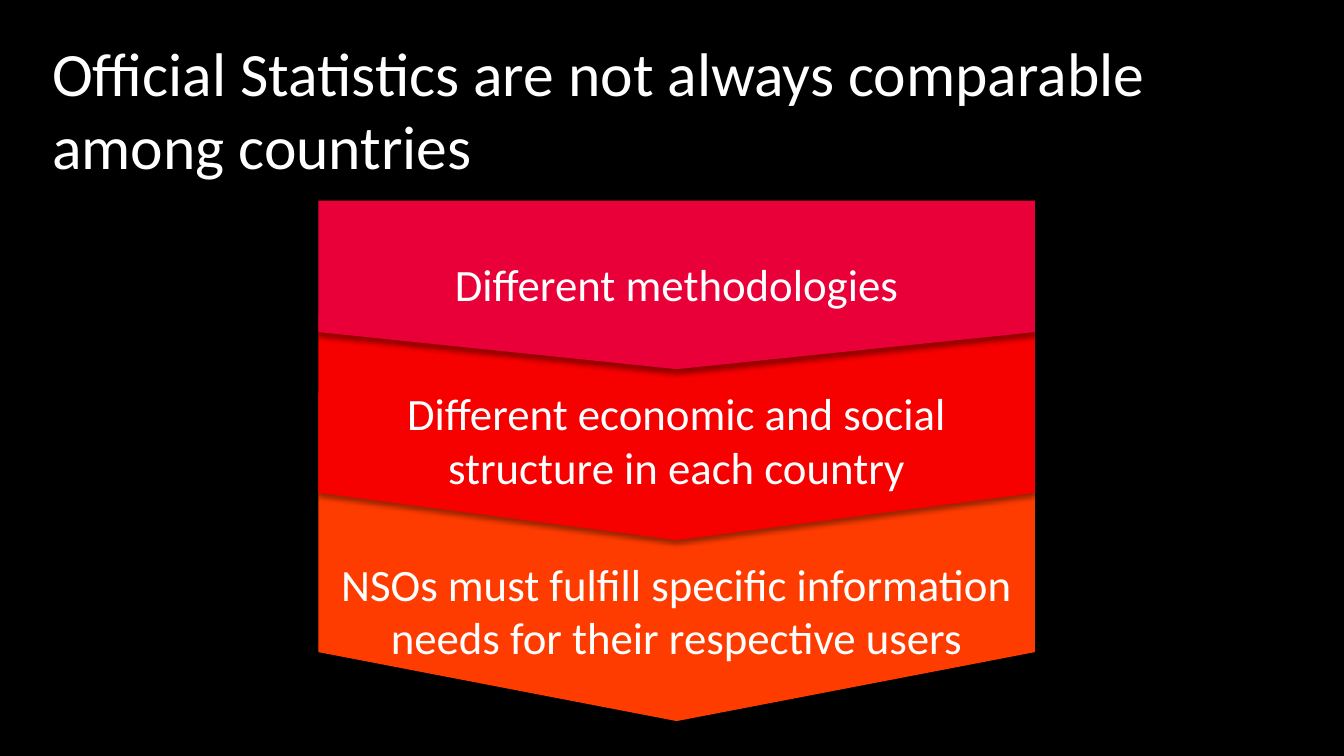
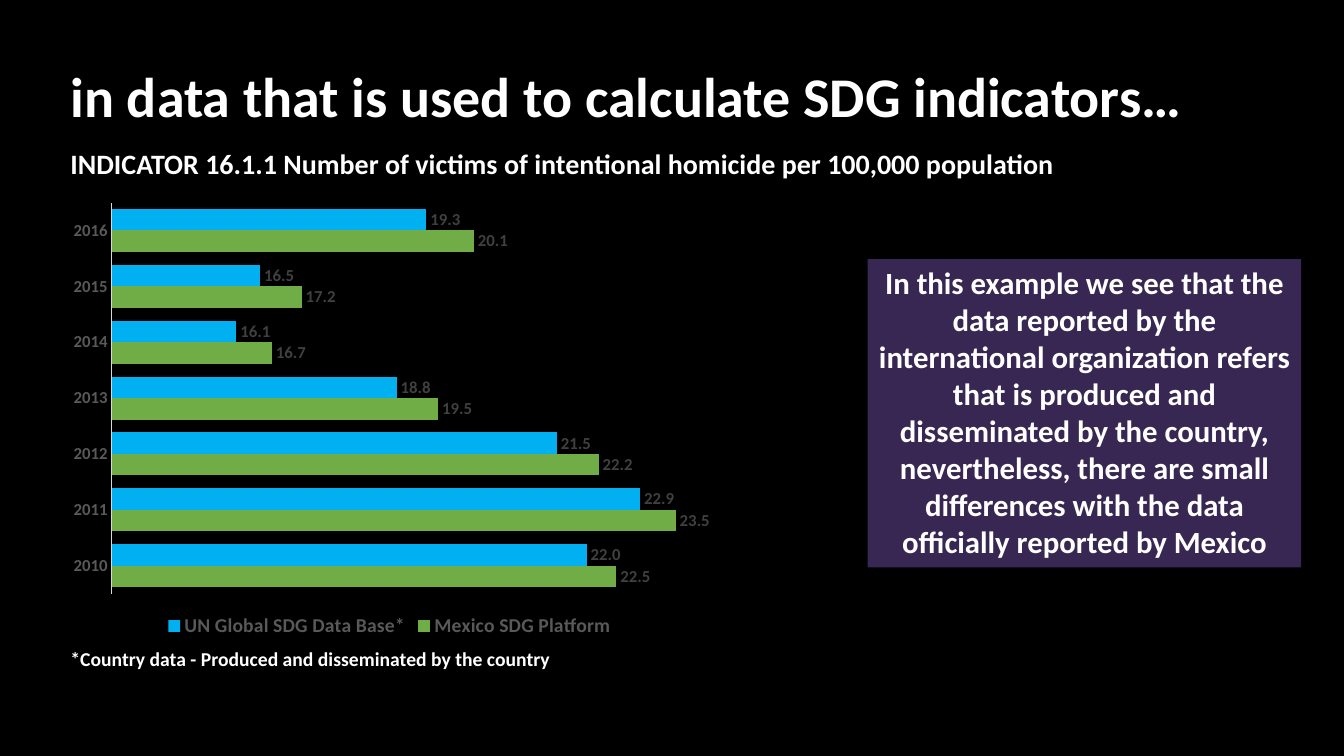
"""Build two slides on the comparability of official statistics."""
from dataclasses import dataclass

from lxml.etree import SubElement
from pptx import Presentation
from pptx.chart.data import CategoryChartData
from pptx.dml.color import RGBColor
from pptx.enum.chart import XL_CHART_TYPE as ChartType
from pptx.enum.chart import XL_LABEL_POSITION as LabelPosition
from pptx.enum.chart import XL_LEGEND_POSITION as LegendPosition
from pptx.enum.chart import XL_TICK_MARK as TickMark
from pptx.enum.shapes import MSO_SHAPE as Preset
from pptx.enum.text import MSO_ANCHOR as Anchor
from pptx.enum.text import MSO_AUTO_SIZE as AutoSize
from pptx.enum.text import PP_ALIGN as Align
from pptx.oxml.ns import qn
from pptx.util import Inches, Pt

SLIDE_WIDTH, SLIDE_HEIGHT = Inches(13.33), Inches(7.5)
COLUMNS, ROWS = 32, 18
TITLE_ONLY = 5
FONT = "Calibri"

BLACK = RGBColor(0x00, 0x00, 0x00)
WHITE = RGBColor(0xFF, 0xFF, 0xFF)
CRIMSON = RGBColor(0xEA, 0x00, 0x38)
RED = RGBColor(0xF7, 0x00, 0x00)
ORANGE = RGBColor(0xFF, 0x3C, 0x00)
PURPLE = RGBColor(0x37, 0x27, 0x52)
GREEN = RGBColor(0x70, 0xAD, 0x47)
BLUE = RGBColor(0x00, 0xB0, 0xF0)
AXIS_GRAY = RGBColor(0xD9, 0xD9, 0xD9)
LEGEND_GRAY = RGBColor(0x59, 0x59, 0x59)
LABEL_GRAY = RGBColor(0x40, 0x40, 0x40)


@dataclass(frozen=True)
class Region:
    left: float
    top: float
    width: float
    height: float

    def box(self) -> tuple[int, int, int, int]:
        column, row = SLIDE_WIDTH / COLUMNS, SLIDE_HEIGHT / ROWS
        return (round(self.left * column), round(self.top * row),
                round(self.width * column), round(self.height * row))


@dataclass(frozen=True)
class TextStyle:
    size: int
    bold: bool = False
    align: Align = Align.LEFT
    anchor: Anchor = Anchor.TOP
    color: RGBColor = WHITE


@dataclass(frozen=True)
class Band:
    text: str
    outline: Preset
    top: float
    height: float
    point: float
    color: RGBColor
    lead: float
    anchor: Anchor = Anchor.TOP


@dataclass(frozen=True)
class Source:
    name: str
    rates: tuple[float, ...]
    color: RGBColor


BAND_LEFT, BAND_WIDTH = 7.58, 17.06
BANDS = (
    Band("NSOs must fulfill specific information needs for their respective users",
         Preset.CHEVRON, 9.35, 7.82, 0.21, ORANGE, 0.94),
    Band("Different economic and social structure in each country",
         Preset.CHEVRON, 7.51, 5.35, 0.21, RED, 0.23),
    Band("Different methodologies",
         Preset.PENTAGON, 4.78, 4.01, 0.22, CRIMSON, 0.2, Anchor.MIDDLE),
)

MARGIN, CHART_WIDTH = 1.44, 15.67
YEARS = tuple(str(year) for year in range(2010, 2017))
SOURCES = (
    Source("Mexico SDG Platform", (22.5, 23.5, 22.2, 19.5, 16.7, 17.2, 20.1), GREEN),
    Source("UN Global SDG Data Base*", (22.0, 22.9, 21.5, 18.8, 16.1, 16.5, 19.3), BLUE),
)


def set_font(font, size: int, color: RGBColor, bold: bool = False) -> None:
    font.name, font.size, font.bold = FONT, Pt(size), bold
    font.color.rgb = color


def write(frame, text: str, style: TextStyle, spacing: int = 0) -> None:
    frame.word_wrap = True
    frame.auto_size = AutoSize.NONE
    frame.vertical_anchor = style.anchor
    paragraph = frame.paragraphs[0]
    paragraph.text = text
    paragraph.alignment = style.align
    paragraph.space_before = paragraph.space_after = Pt(spacing)
    set_font(paragraph.font, style.size, style.color, style.bold)


def add_titled_slide(deck, text: str, region: Region, style: TextStyle, spacing: int = 0):
    slide = deck.slides.add_slide(deck.slide_layouts[TITLE_ONLY])
    title = slide.shapes.title
    title.left, title.top, title.width, title.height = region.box()
    write(title.text_frame, text, style, spacing)
    return slide


def add_note(slide, text: str, region: Region, style: TextStyle) -> None:
    write(slide.shapes.add_textbox(*region.box()).text_frame, text, style)


def add_filled(slide, outline: Preset, box: tuple[int, int, int, int], color: RGBColor):
    shape = slide.shapes.add_shape(outline, *box)
    shape.shadow.inherit = False
    shape.fill.solid()
    shape.fill.fore_color.rgb = color
    shape.line.fill.background()
    return shape


def cast_shadow(shape) -> None:
    effects = shape._element.spPr.find(qn("a:effectLst"))
    shadow = SubElement(effects, qn("a:outerShdw"), blurRad=str(Pt(4)), dist=str(Pt(3)),
                        dir="5400000", rotWithShape="0")
    tint = SubElement(shadow, qn("a:srgbClr"), val=str(BLACK))
    SubElement(tint, qn("a:alpha"), val="40000")


def add_band(slide, band: Band) -> None:
    left, top, width, height = Region(BAND_LEFT, band.top, BAND_WIDTH, band.height).box()
    turned = (left + (width - height) // 2, top + (height - width) // 2, height, width)
    shape = add_filled(slide, band.outline, turned, band.color)
    shape.rotation = 90
    shape.adjustments[0] = band.point
    cast_shadow(shape)
    frame = shape.text_frame
    write(frame, band.text, TextStyle(32, align=Align.CENTER, anchor=band.anchor), 6)
    frame.margin_left, frame.margin_right = Inches(band.lead), Inches(0.1)
    frame.margin_top = frame.margin_bottom = Inches(0.05)
    frame._txBody.bodyPr.set("vert", "vert270")


def add_rates_chart(slide, region: Region) -> None:
    rates = CategoryChartData(number_format="#,##0.0")
    rates.categories = YEARS
    for source in SOURCES:
        rates.add_series(source.name, source.rates)
    chart = slide.shapes.add_chart(ChartType.BAR_CLUSTERED, *region.box(), rates).chart
    set_font(chart.font, 10, BLACK)
    chart.has_title = False
    chart.has_legend = True
    chart.legend.position = LegendPosition.BOTTOM
    chart.legend.include_in_layout = False
    set_font(chart.legend.font, 14, LEGEND_GRAY, True)

    years = chart.category_axis
    years.major_tick_mark = years.minor_tick_mark = TickMark.NONE
    years.format.line.color.rgb = AXIS_GRAY
    years.format.line.width = Pt(0.75)
    set_font(years.tick_labels.font, 12, LEGEND_GRAY, True)
    chart.value_axis.visible = False
    chart.value_axis.has_major_gridlines = False
    chart.value_axis.minimum_scale = 14

    plot = chart.plots[0]
    plot.gap_width, plot.overlap, plot.vary_by_categories = 60, 0, False
    for series, source in zip(plot.series, SOURCES):
        series.format.fill.solid()
        series.format.fill.fore_color.rgb = source.color
        labels = series.data_labels
        labels.show_value = True
        labels.position = LabelPosition.OUTSIDE_END
        labels.number_format, labels.number_format_is_linked = "#,##0.0", False
        set_font(labels.font, 12, LABEL_GRAY, True)


def add_reasons_slide(deck) -> None:
    slide = add_titled_slide(
        deck, "Official Statistics are not always comparable among countries",
        Region(1, 0.7, 30.2, 3.8), TextStyle(44), 6)
    for band in BANDS:
        add_band(slide, band)


def add_example_slide(deck) -> None:
    slide = add_titled_slide(
        deck, "in data that is used to calculate SDG indicators…",
        Region(MARGIN, 1.34, 30.3, 1.86), TextStyle(40, True))
    add_note(slide, "INDICATOR 16.1.1 Number of victims of intentional homicide "
             "per 100,000 population", Region(MARGIN, 3.38, 30, 1.06), TextStyle(20, True))
    add_note(slide, "*Country data - Produced and disseminated by the country",
             Region(MARGIN, 15.29, CHART_WIDTH, 0.8), TextStyle(14, True))
    add_rates_chart(slide, Region(MARGIN, 4.61, CHART_WIDTH, 10.68))
    finding = add_filled(slide, Preset.RECTANGLE,
                         Region(20.66, 6.17, 10.32, 7.34).box(), PURPLE)
    write(finding.text_frame,
          "In this example we see that the data reported by the international "
          "organization refers that is produced and disseminated by the country, "
          "nevertheless, there are small differences with the data officially "
          "reported by Mexico", TextStyle(22, True, Align.CENTER))


def main() -> None:
    deck = Presentation()
    deck.slide_width, deck.slide_height = SLIDE_WIDTH, SLIDE_HEIGHT
    backdrop = deck.slide_master.background.fill
    backdrop.solid()
    backdrop.fore_color.rgb = BLACK
    add_reasons_slide(deck)
    add_example_slide(deck)
    deck.save("out.pptx")


if __name__ == "__main__":
    main()
